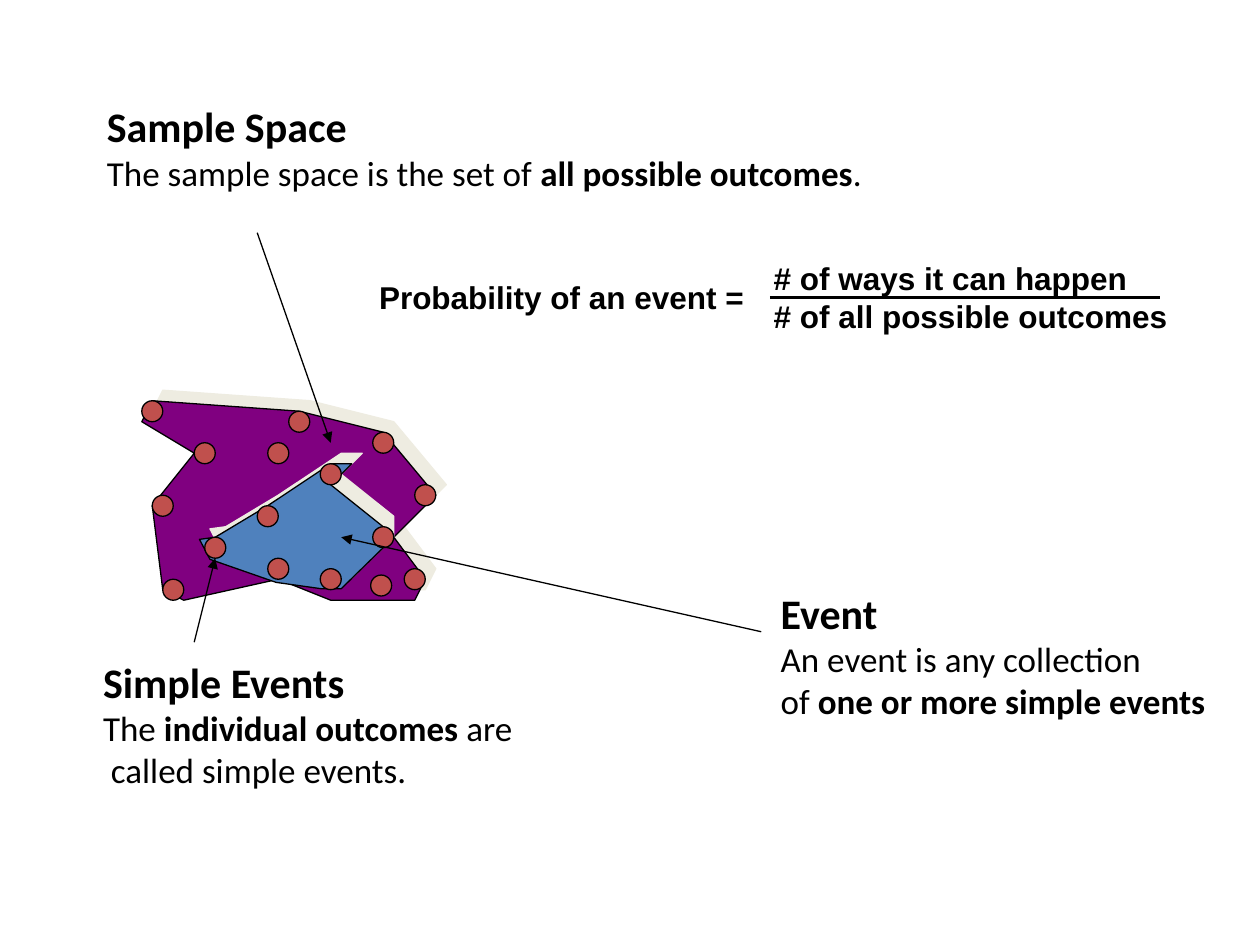
from lxml import etree
from pptx import Presentation
from pptx.dml.color import RGBColor
from pptx.enum.shapes import MSO_CONNECTOR as CONN, MSO_SHAPE as SHAPE
from pptx.enum.text import MSO_AUTO_SIZE as AUTO
from pptx.oxml import parse_xml
from pptx.oxml.ns import nsdecls, qn
from pptx.util import Pt

BLACK, PURPLE, BLUE, RED, CREAM = "000000", "800080", "4F81BD", "C0504D", "EEECE1"
LEFT, TOP, STEP = 81, 229, 6  # grid of the diagram, in points

SPACE_OUTLINE = [(1, 0), (15, 1), (23, 3), (28, 9), (24, 13), (27, 17), (26, 19),
                 (18, 19), (13, 17), (4, 19), (2, 18), (1, 10), (5, 5), (0, 2)]
EVENT_OUTLINE = [(7, 13), (12, 10), (18, 6), (20, 6), (18, 8), (23, 12), (23, 14),
                 (19, 17.9), (17.1, 17.9), (12.8, 17.3), (6.5, 15.1), (5.5, 13.2)]
OUTCOMES = [(0, 0), (14, 1), (12, 4), (1, 9), (6, 13), (22, 3), (26, 8), (5, 4),
            (2, 17), (17, 6), (11, 10), (12, 15), (22, 12), (17, 16), (25, 16),
            (21.8, 16.6)]
POINTERS = [((11, -16), (18, 4)), ((5, 23), (7, 15)), ((59, 22), (19, 13))]

DEFINITIONS = [
    ((54, 54, 454, 60.5), "Sample Space",
     ["The sample space is the set of *all possible outcomes*."]),
    ((51.8, 371.5, 250.5, 85), "Simple Events",
     ["The *individual outcomes* are", " called simple events."]),
    ((439, 332, 259, 85), "Event",
     ["An event is any collection", "of *one or more simple events*"]),
]
FORMULA = [
    ((435, 144.7, 240, 51), ["# of ways it can happen", "# of all possible outcomes"]),
    ((209.5, 155.5, 225.5, 29), ["Probability of an event ="]),
]


def rgb(value):
    return RGBColor.from_string(value)


def grid(point):
    """Turn a grid position into slide lengths."""
    return Pt(LEFT + STEP * point[0]), Pt(TOP + STEP * point[1])


class Canvas:
    heading = {"name": "Calibri", "size": Pt(24), "bold": True}
    body = {"name": "Calibri", "size": Pt(20), "bold": False}
    formula = {"name": "Arial", "size": Pt(18), "bold": True}

    def __init__(self, s):
        self.s = s

    def paint(self, sp, fill):
        sp.shadow.inherit = False
        sp.fill.solid()
        sp.fill.fore_color.rgb = rgb(fill)
        sp.line.color.rgb = rgb(BLACK)
        sp.line.width = Pt(0.75)

    def region(self, outline, fill):
        """Draw a closed outline with a hard shadow up and to the right."""
        start, *rest = [grid(point) for point in outline]
        builder = self.s.shapes.build_freeform(*start)
        builder.add_line_segments(rest, close=True)
        sp = builder.convert_to_shape()
        self.paint(sp, fill)
        sp._element.spPr.find(qn("a:effectLst")).append(parse_xml(
            f'<a:outerShdw {nsdecls("a")} dist="{Pt(8.5)}" dir="18900000" algn="ctr" '
            f'rotWithShape="0"><a:srgbClr val="{CREAM}"/></a:outerShdw>'))

    def dot(self, point):
        size = Pt(2 * STEP)
        self.paint(self.s.shapes.add_shape(SHAPE.OVAL, *grid(point), size, size), RED)

    def line(self, start, end, width=0.75, arrow=True):
        cn = self.s.shapes.add_connector(CONN.STRAIGHT, *start, *end)
        cn.line.color.rgb = rgb(BLACK)
        cn.line.width = Pt(width)
        if arrow:
            etree.SubElement(cn.line._get_or_add_ln(), qn("a:tailEnd"), type="triangle")
        etree.SubElement(cn._element.spPr, qn("a:effectLst"))

    def text(self, box, lines, wrap=False):
        """Write (text, style) lines; asterisks enclose bold words."""
        tf = self.s.shapes.add_textbox(*map(Pt, box)).text_frame
        tf.word_wrap = wrap
        tf.auto_size = AUTO.SHAPE_TO_FIT_TEXT
        for i, (line, style) in enumerate(lines):
            p = tf.add_paragraph() if i else tf.paragraphs[0]
            for j, part in enumerate(line.split("*")):
                if not part:
                    continue
                r = p.add_run()
                r.text = part
                for name, value in style.items():
                    setattr(r.font, name, value)
                r.font.color.rgb = rgb(BLACK)
                if j % 2:
                    r.font.bold = True


def main():
    prs = Presentation()
    prs.slide_width, prs.slide_height = Pt(720), Pt(540)
    canvas = Canvas(prs.slides.add_slide(prs.slide_layouts[6]))

    canvas.region(SPACE_OUTLINE, PURPLE)
    canvas.region(EVENT_OUTLINE, BLUE)
    for point in OUTCOMES:
        canvas.dot(point)
    for start, end in POINTERS:
        canvas.line(grid(start), grid(end))

    for box, title, lines in DEFINITIONS:
        canvas.text(box, [(title, canvas.heading)] + [(t, canvas.body) for t in lines])
    for box, lines in FORMULA:
        canvas.text(box, [(t, canvas.formula) for t in lines], wrap=True)
    canvas.line((Pt(440), Pt(170)), (Pt(663), Pt(170)), width=2, arrow=False)

    prs.save("out.pptx")


if __name__ == "__main__":
    main()
